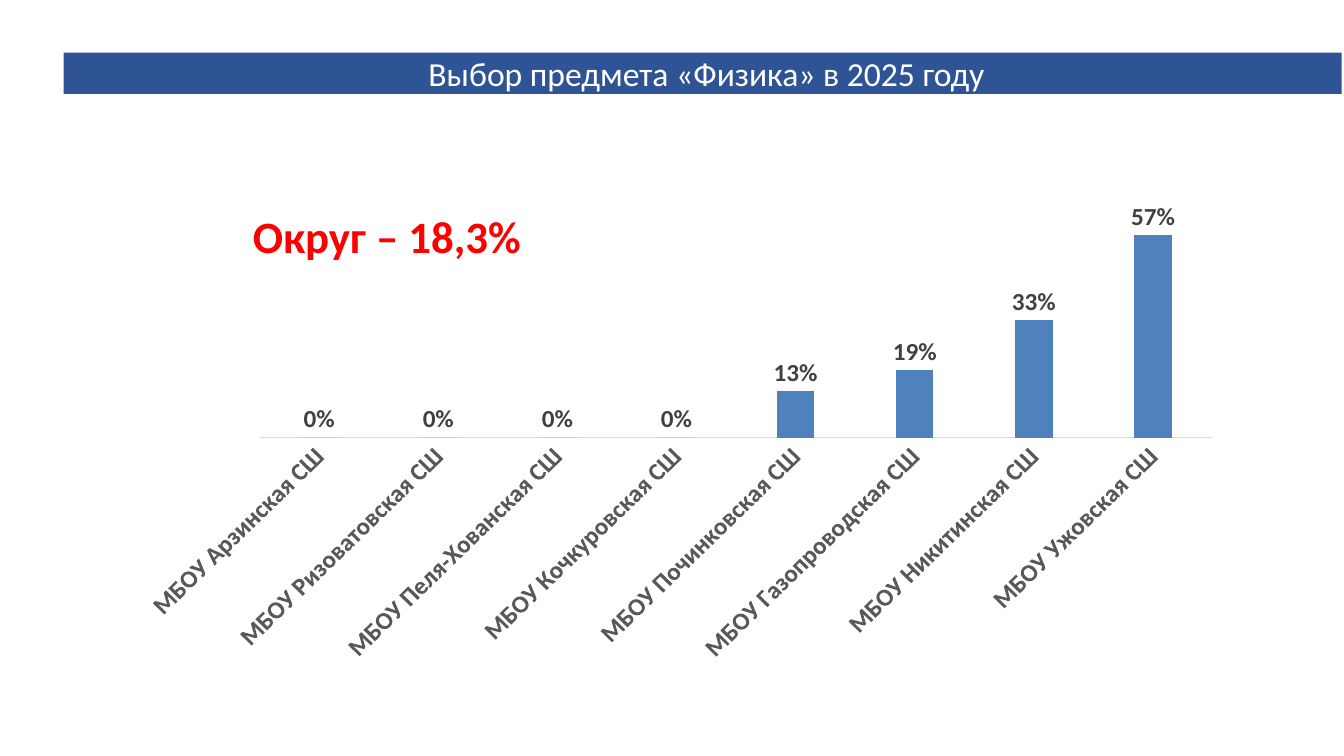
from pptx import Presentation
from pptx.chart.data import CategoryChartData
from pptx.dml.color import RGBColor
from pptx.enum.chart import XL_CHART_TYPE, XL_LABEL_POSITION, XL_TICK_MARK
from pptx.enum.shapes import MSO_SHAPE
from pptx.enum.text import MSO_ANCHOR, PP_ALIGN
from pptx.oxml import parse_xml
from pptx.oxml.ns import nsdecls, qn
from pptx.util import Pt

COLUMN = XL_CHART_TYPE.COLUMN_CLUSTERED
OUTSIDE_END = XL_LABEL_POSITION.OUTSIDE_END
NO_TICK = XL_TICK_MARK.NONE
RECTANGLE = MSO_SHAPE.RECTANGLE
MIDDLE, TOP = MSO_ANCHOR.MIDDLE, MSO_ANCHOR.TOP
LEFT, CENTER = PP_ALIGN.LEFT, PP_ALIGN.CENTER

WHITE = RGBColor(0xFF, 0xFF, 0xFF)
BLACK = RGBColor(0, 0, 0)
RED = RGBColor(0xFF, 0, 0)
BANNER_BLUE = RGBColor(0x2E, 0x54, 0x96)
BAR_BLUE = RGBColor(0x4F, 0x81, 0xBD)
AXIS_LINE = RGBColor(0xD9, 0xD9, 0xD9)
AXIS_TEXT = RGBColor(0x59, 0x59, 0x59)
LABEL_TEXT = RGBColor(0x40, 0x40, 0x40)
FONT = "Calibri"

SCHOOL_SHARES = {
    "Арзинская": 0, "Ризоватовская": 0, "Пеля-Хованская": 0,
    "Кочкуровская": 0, "Починковская": 0.13, "Газопроводская": 0.19,
    "Никитинская": 0.33, "Ужовская": 0.57,
}


def set_font(font, size, color, bold=False):
    font.name, font.size, font.bold = FONT, Pt(size), bold
    font.color.rgb = color


def write_text(frame, text, size, color, bold=False, align=LEFT, anchor=TOP):
    frame.word_wrap = True
    frame.vertical_anchor = anchor
    paragraph = frame.paragraphs[0]
    paragraph.alignment = align
    run = paragraph.add_run()
    run.text = text
    set_font(run.font, size, color, bold)
    return paragraph


def add_district_average(slide, left, top, width, height):
    average = slide.shapes.add_textbox(Pt(left), Pt(top), Pt(width), Pt(height))
    write_text(average.text_frame, "Округ – 18,3%", 32, RED, bold=True)


def add_school_chart(slide, left, top, width, height):
    data = CategoryChartData(number_format="0%")
    data.categories = [f"МБОУ {school} СШ" for school in SCHOOL_SHARES]
    data.add_series("Series 1", SCHOOL_SHARES.values())
    chart = slide.shapes.add_chart(
        COLUMN, Pt(left), Pt(top), Pt(width), Pt(height), data).chart
    chart.has_legend = chart.has_title = False
    set_font(chart.font, 10, BLACK)

    # Transparent background keeps the district average visible
    chart_space = chart._chartSpace
    chart_space.find(qn("c:chart")).addnext(parse_xml(
        f"<c:spPr {nsdecls('c', 'a')}><a:noFill/><a:ln><a:noFill/></a:ln></c:spPr>"))

    # Bars and their labels
    bars = chart.plots[0]
    bars.gap_width, bars.overlap = 219, -27
    bars.vary_by_categories = False
    fill = bars.series[0].format.fill
    fill.solid()
    fill.fore_color.rgb = BAR_BLUE
    bars.has_data_labels = True
    labels = bars.data_labels
    labels.show_value = True
    labels.position = OUTSIDE_END
    labels.number_format, labels.number_format_is_linked = "0%", False
    set_font(labels.font, 18, LABEL_TEXT, bold=True)

    # Axes
    shares = chart.value_axis
    shares.has_major_gridlines = False
    shares.visible = False
    schools = chart.category_axis
    schools.major_tick_mark = schools.minor_tick_mark = NO_TICK
    schools.format.line.color.rgb = AXIS_LINE
    schools.format.line.width = Pt(0.75)
    set_font(schools.tick_labels.font, 18, AXIS_TEXT, bold=True)
    schools._element.find(qn("c:txPr")).find(qn("a:bodyPr")).set("rot", "-2700000")


def add_banner(slide, left, top, width, height):
    banner = slide.shapes.add_shape(
        RECTANGLE, Pt(left), Pt(top), Pt(width), Pt(height))
    banner.shadow.inherit = False
    banner.fill.solid()
    banner.fill.fore_color.rgb = BANNER_BLUE
    banner.line.fill.background()
    frame = banner.text_frame
    frame.margin_left = frame.margin_right = frame.margin_bottom = 0
    frame.margin_top = Pt(3)
    title = write_text(frame, " Выбор предмета «Физика» в 2025 году", 24, WHITE,
                       align=CENTER, anchor=MIDDLE)
    title.line_spacing, title.space_before = Pt(25.9), Pt(3.2)


def main():
    deck = Presentation()
    deck.slide_width, deck.slide_height = Pt(960), Pt(540)
    slide = deck.slides.add_slide(deck.slide_layouts[6])
    add_district_average(slide, 173.5, 145.5, 232.5, 46)
    add_school_chart(slide, 88.5, 144, 793.5, 335.5)
    add_banner(slide, 45.4, 37.5, 913, 29.5)
    deck.save("out.pptx")


if __name__ == "__main__":
    main()
